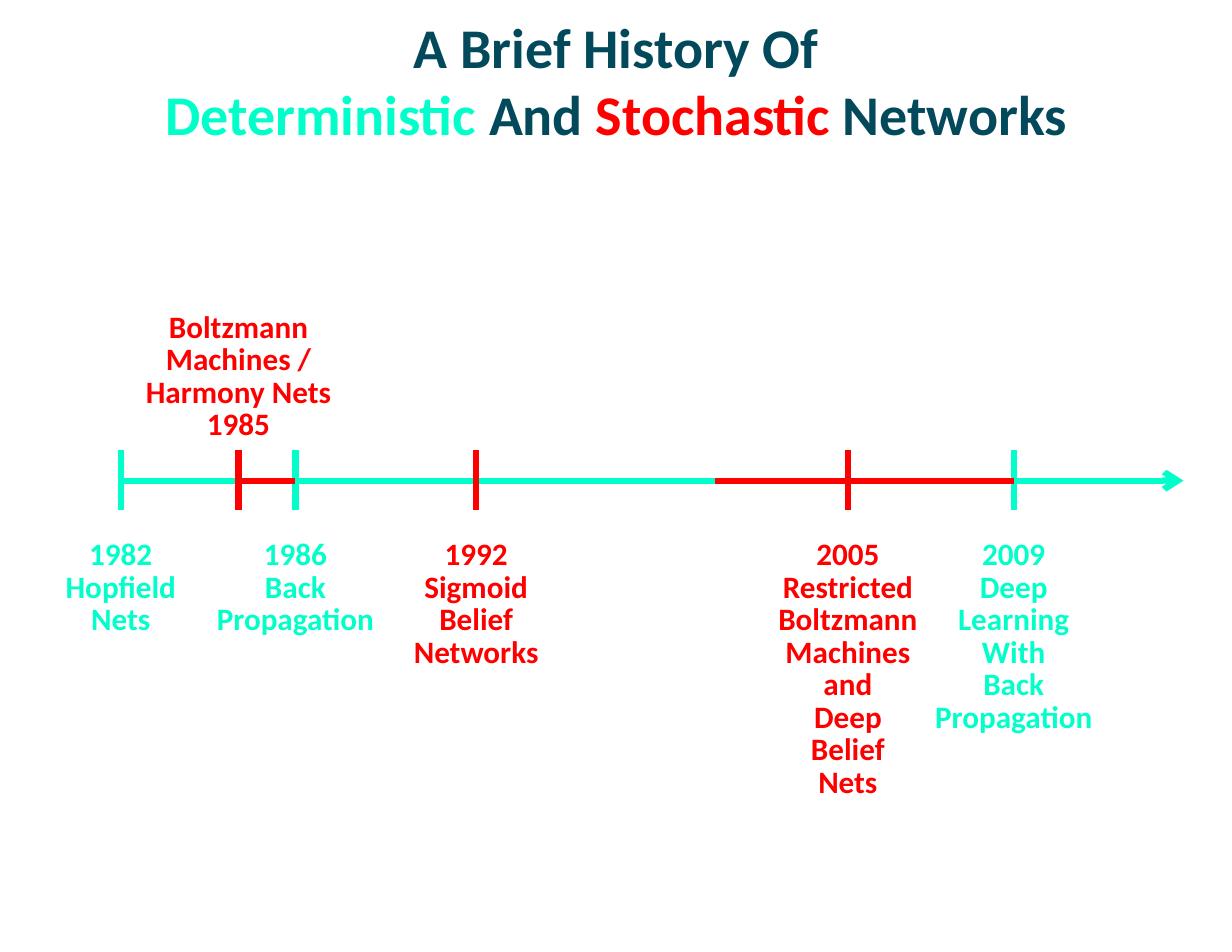
from dataclasses import dataclass

from lxml import etree
from pptx import Presentation
from pptx.dml.color import RGBColor
from pptx.enum.shapes import MSO_CONNECTOR
from pptx.enum.text import MSO_ANCHOR, MSO_AUTO_SIZE, PP_ALIGN
from pptx.oxml.ns import qn
from pptx.util import Cm, Pt

STRAIGHT = MSO_CONNECTOR.STRAIGHT
CENTER = PP_ALIGN.CENTER
MIDDLE = MSO_ANCHOR.MIDDLE
NO_FIT = MSO_AUTO_SIZE.NONE
GROW = MSO_AUTO_SIZE.SHAPE_TO_FIT_TEXT
TITLE_ONLY = 5


@dataclass(frozen=True)
class Theme:
    font: str = "Calibri"
    ink: str = "03495C"
    deterministic: str = "00FFCA"
    stochastic: str = "FF0000"
    title_size: int = 36
    label_size: int = 20
    line_width: int = 4
    label_spacing: float = 0.87


@dataclass(frozen=True)
class Box:
    """A region in centimetres."""
    left: float
    top: float
    width: float
    height: float


@dataclass(frozen=True)
class Event:
    """A tick at an offset along the axis, with its label; \\v breaks a line."""
    offset: float
    color: str
    label_width: float
    lines: tuple
    above: bool = False


THEME = Theme()
TITLE_BOX = Box(1.4, 0.48, 25.15, 2.64)
TIMELINE_BOX = Box(2.74, 6.9, 24.1, 11.5)

TITLE_SPANS = (
    ("A Brief History Of\v", THEME.ink),
    ("Deterministic ", THEME.deterministic),
    ("And ", THEME.ink),
    ("Stochastic", THEME.stochastic),
    (" Networks", THEME.ink),
)
EVENTS = (
    Event(0, THEME.deterministic, 3.05, ("1982", "Hopfield", "Nets")),
    Event(2.67, THEME.stochastic, 4.78,
          ("Boltzmann", "Machines /", "Harmony Nets", "1985"), above=True),
    Event(3.96, THEME.deterministic, 4.14, ("1986", "Back", "Propagation")),
    Event(8.06, THEME.stochastic, 3.4, ("1992\vSigmoid\vBelief", "Networks")),
    Event(16.49, THEME.stochastic, 3.71,
          ("2005", "Restricted", "Boltzmann\vMachines", "and", "Deep",
           "Belief", "Nets")),
    Event(20.25, THEME.deterministic, 4.14,
          ("2009", "Deep", "Learning", "With", "Back", "Propagation")),
)
STOCHASTIC_PERIODS = ((2.67, 3.96), (13.47, 20.25))

AXIS_DROP = 4.0
TICK_RISE, TICK_FALL = 0.7, 0.67
LABEL_DROP = 1.22
LABEL_LINE, LABEL_PADDING = 0.74, 0.28


def add_text(para, text, *, size, color, bold=True, font=THEME.font):
    """Add text to a paragraph, with each \\v as a line break."""
    for number, part in enumerate(text.split("\v")):
        if number:
            para.add_line_break()
        if part:
            span = para.add_run()
            span.text = part
            span.font.name = font
            span.font.size = Pt(size)
            span.font.bold = bold
            span.font.color.rgb = RGBColor.from_string(color)


def add_line(slide, start, end, color, arrow=False):
    line = slide.shapes.add_connector(
        STRAIGHT, *(Cm(value) for value in (*start, *end)))
    line.line.color.rgb = RGBColor.from_string(color)
    line.line.width = Pt(THEME.line_width)
    if arrow:
        etree.SubElement(line.line._get_or_add_ln(), qn("a:tailEnd"), type="arrow")
    etree.SubElement(line._element.spPr, qn("a:effectLst"))


def place_title(slide, box):
    title = slide.shapes.title
    title.left, title.top = Cm(box.left), Cm(box.top)
    title.width, title.height = Cm(box.width), Cm(box.height)
    frame = title.text_frame
    frame.auto_size = NO_FIT
    frame.vertical_anchor = MIDDLE
    frame.margin_left = frame.margin_right = Cm(0.28)
    frame.margin_top = frame.margin_bottom = Cm(0.15)
    para = frame.paragraphs[0]
    para.alignment = CENTER
    for text, color in TITLE_SPANS:
        add_text(para, text, size=THEME.title_size, color=color)


def place_label(slide, event, center, axis):
    line_count = sum(1 + line.count("\v") for line in event.lines)
    height = line_count * LABEL_LINE + LABEL_PADDING
    top = axis - TICK_RISE - height if event.above else axis + LABEL_DROP
    label = slide.shapes.add_textbox(
        Cm(center - event.label_width / 2), Cm(top),
        Cm(event.label_width), Cm(height))
    frame = label.text_frame
    frame.word_wrap = False
    frame.auto_size = GROW
    for number, line in enumerate(event.lines):
        para = frame.add_paragraph() if number else frame.paragraphs[0]
        para.alignment = CENTER
        para.line_spacing = THEME.label_spacing
        add_text(para, line, size=THEME.label_size, color=event.color)


def place_timeline(slide, box):
    axis = box.top + AXIS_DROP
    add_line(slide, (box.left, axis), (box.left + box.width, axis),
             THEME.deterministic, arrow=True)
    for event in EVENTS:
        center = box.left + event.offset
        add_line(slide, (center, axis - TICK_RISE), (center, axis + TICK_FALL),
                 event.color)
        place_label(slide, event, center, axis)
    for start, end in STOCHASTIC_PERIODS:
        add_line(slide, (box.left + start, axis), (box.left + end, axis),
                 THEME.stochastic)


def main():
    deck = Presentation()
    deck.slide_width, deck.slide_height = Cm(27.94), Cm(21.59)
    slide = deck.slides.add_slide(deck.slide_layouts[TITLE_ONLY])
    place_title(slide, TITLE_BOX)
    place_timeline(slide, TIMELINE_BOX)
    deck.save("out.pptx")


if __name__ == "__main__":
    main()
